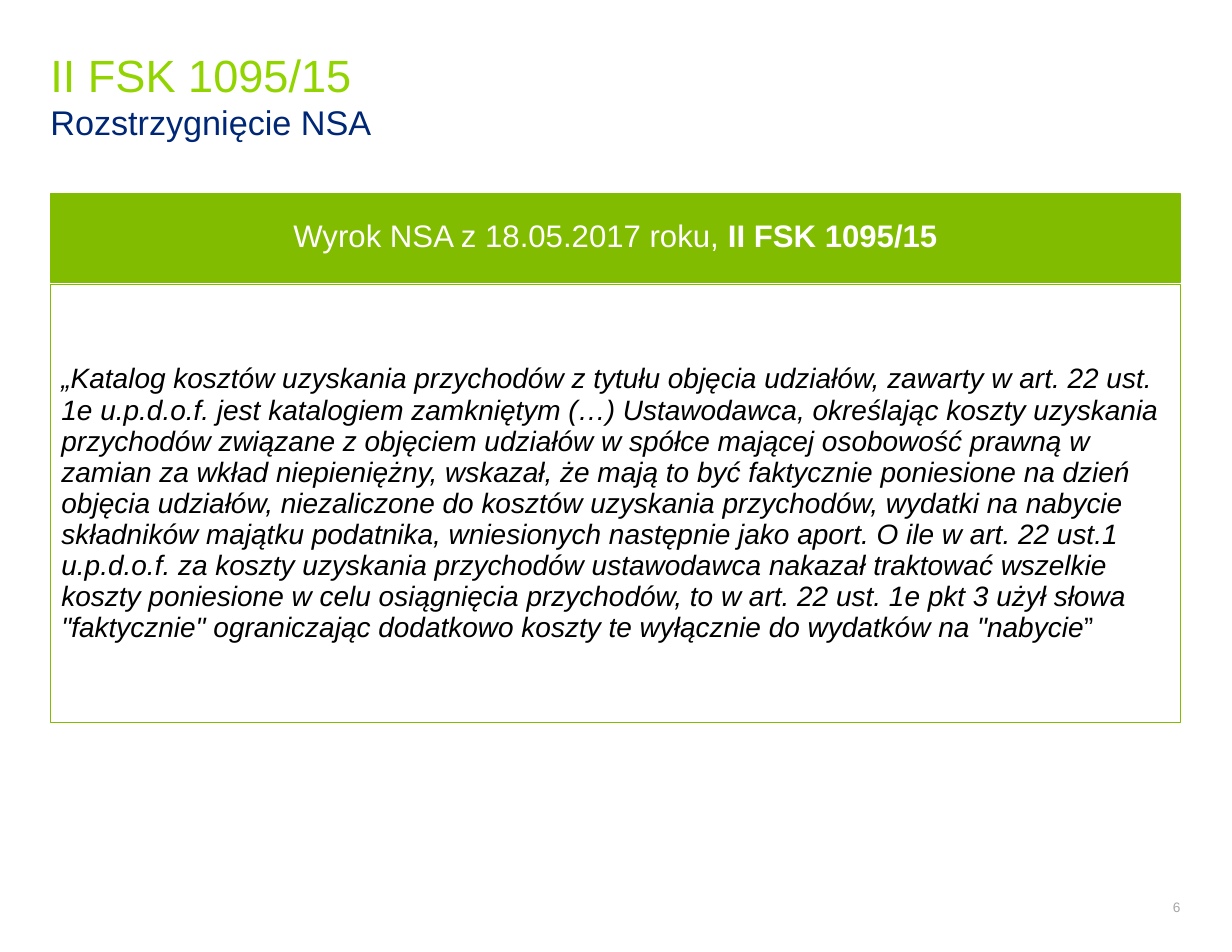
from pptx import Presentation
from pptx.dml.color import RGBColor
from pptx.enum import shapes, text
from pptx.util import Inches, Pt

LIME = RGBColor(0x92, 0xD4, 0x00)
NAVY = RGBColor(0x00, 0x27, 0x76)
GREEN = RGBColor(0x81, 0xBC, 0x00)
GRAY = RGBColor(0xA6, 0xA6, 0xA6)
BLACK = RGBColor(0x00, 0x00, 0x00)
WHITE = RGBColor(0xFF, 0xFF, 0xFF)

LEFT, WIDTH = 0.45, 10.09
QUOTE = (
    "„Katalog kosztów uzyskania przychodów z tytułu objęcia udziałów, zawarty w art. 22 ust. 1e "
    "u.p.d.o.f. jest katalogiem zamkniętym (…) Ustawodawca, określając koszty uzyskania "
    "przychodów związane z objęciem udziałów w spółce mającej osobowość prawną w zamian za wkład "
    "niepieniężny, wskazał, że mają to być faktycznie poniesione na dzień objęcia udziałów, "
    "niezaliczone do kosztów uzyskania przychodów, wydatki na nabycie składników majątku "
    "podatnika, wniesionych następnie jako aport. O ile w art. 22 ust.1 u.p.d.o.f. za koszty "
    "uzyskania przychodów ustawodawca nakazał traktować wszelkie koszty poniesione w celu "
    "osiągnięcia przychodów, to w art. 22 ust. 1e pkt 3 użył słowa \"faktycznie\" ograniczając "
    "dodatkowo koszty te wyłącznie do wydatków na \"nabycie"
)


def add_span(para, words, size, color, bold=False, italic=False):
    """Append formatted text to a paragraph."""
    span = para.add_run()
    span.text = words
    span.font.name = "Arial"
    span.font.size = Pt(size)
    span.font.color.rgb = color
    span.font.bold = bold
    span.font.italic = italic


def prepare_text(shape, margin=0, align=text.PP_ALIGN.LEFT):
    """Set up a shape's text frame and return its first paragraph."""
    frame = shape.text_frame
    frame.word_wrap = True
    frame.vertical_anchor = text.MSO_ANCHOR.MIDDLE
    frame.margin_left = frame.margin_right = Inches(margin)
    frame.margin_top = frame.margin_bottom = Inches(margin)
    para = frame.paragraphs[0]
    para.alignment = align
    return para


def add_label(page, left, top, width, height, align=text.PP_ALIGN.LEFT):
    """Add a text box without margins and return its paragraph."""
    box = page.shapes.add_textbox(Inches(left), Inches(top), Inches(width), Inches(height))
    return prepare_text(box, align=align)


def add_panel(page, top, height, fill, align):
    """Add a green-edged panel and return its paragraph."""
    panel = page.shapes.add_shape(
        shapes.MSO_SHAPE.RECTANGLE, Inches(LEFT), Inches(top), Inches(WIDTH), Inches(height)
    )
    panel.shadow.inherit = False
    panel.fill.solid()
    panel.fill.fore_color.rgb = fill
    panel.line.color.rgb = GREEN
    panel.line.width = Pt(1)
    para = prepare_text(panel, margin=0.1, align=align)
    para.line_spacing = Pt(20)
    para.space_after = Pt(6)
    return para


def main():
    """Build the ruling slide and save it."""
    deck = Presentation()
    deck.slide_width, deck.slide_height = Inches(11), Inches(8.5)
    page = deck.slides.add_slide(deck.slide_layouts[6])

    title = add_label(page, LEFT, 0.31, WIDTH, 1.07)
    add_span(title, "II FSK 1095/15", 29, LIME)
    title.add_line_break()
    add_span(title, "Rozstrzygnięcie NSA", 22, NAVY)

    number = add_label(page, 9.59, 7.94, 0.95, 0.31, align=text.PP_ALIGN.RIGHT)
    add_span(number, "6", 8.8, GRAY)

    heading = add_panel(page, 1.73, 0.79, GREEN, text.PP_ALIGN.CENTER)
    add_span(heading, "Wyrok NSA z 18.05.2017 roku, ", 20, WHITE)
    add_span(heading, "II FSK 1095/15", 20, WHITE, bold=True)

    ruling = add_panel(page, 2.54, 3.91, WHITE, text.PP_ALIGN.LEFT)
    add_span(ruling, QUOTE, 18, BLACK, italic=True)
    add_span(ruling, "”", 18, BLACK)

    deck.save("out.pptx")


if __name__ == "__main__":
    main()
